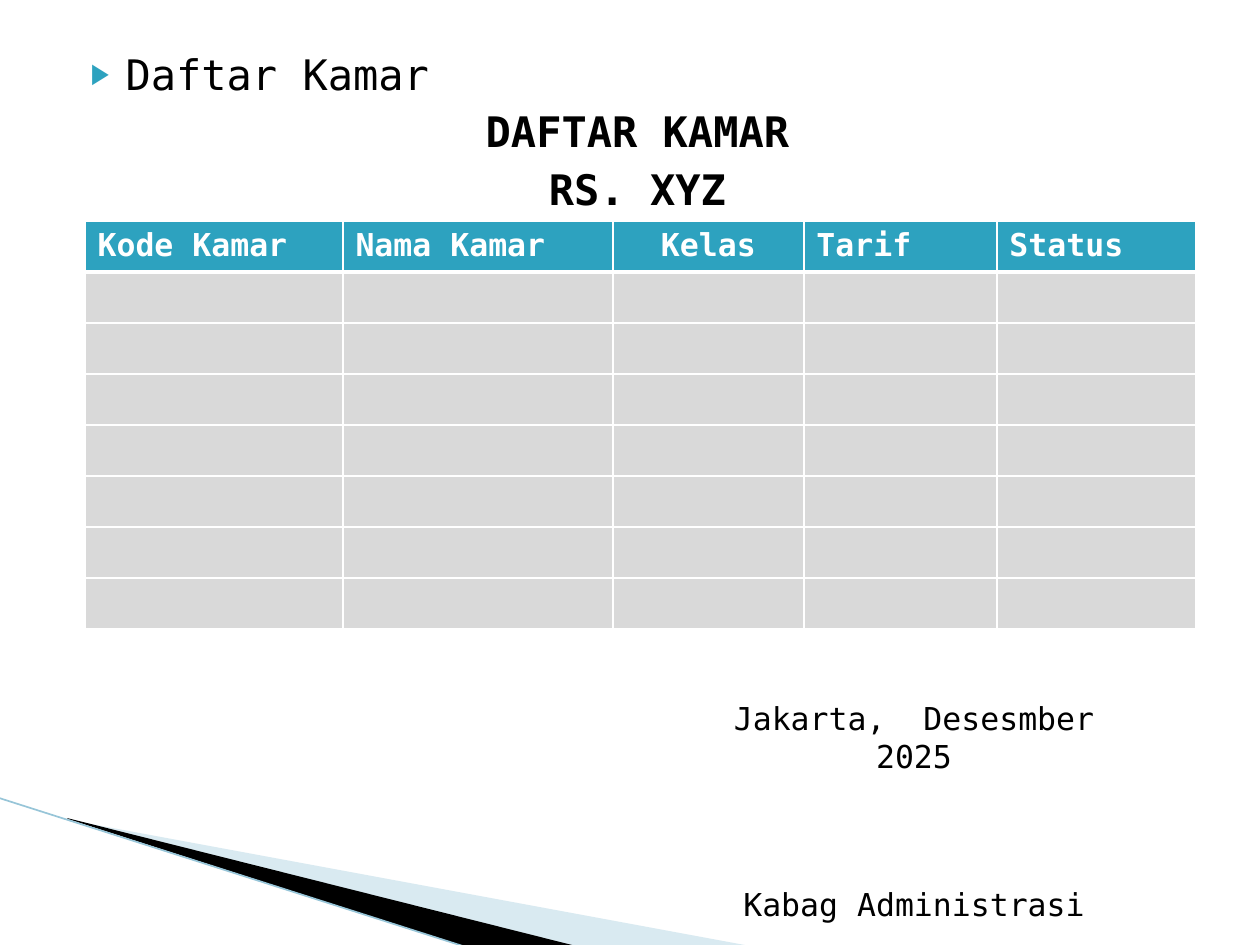
from lxml.etree import SubElement
from pptx import Presentation
from pptx.dml.color import RGBColor
from pptx.enum.shapes import MSO_CONNECTOR
from pptx.enum.text import MSO_ANCHOR, MSO_AUTO_SIZE, PP_ALIGN
from pptx.oxml.ns import qn
from pptx.util import Pt

PX = 914400 // 126
FONT = "DejaVu Sans Mono"
BLACK = RGBColor(0x00, 0x00, 0x00)
WHITE = RGBColor(0xFF, 0xFF, 0xFF)
TEAL = RGBColor(0x2D, 0xA2, 0xBF)
PALE_BLUE = RGBColor(0xA0, 0xCB, 0xDC)
EDGE_BLUE = RGBColor(0x97, 0xC5, 0xD8)
GRAY = RGBColor(0xD9, 0xD9, 0xD9)


def style(paragraph, size, color=BLACK, bold=False, align=PP_ALIGN.LEFT):
    paragraph.alignment = align
    font = paragraph.font
    font.name, font.size, font.bold = FONT, Pt(size), bold
    font.color.rgb = color
    for run in paragraph.runs:
        run.font.name, run.font.size, run.font.bold = FONT, Pt(size), bold
        run.font.color.rgb = color


def add_border(cell, side, width):
    line = SubElement(cell._tc.get_or_add_tcPr(), qn(f"a:ln{side}"), w=str(Pt(width)))
    fill = SubElement(line, qn("a:solidFill"))
    SubElement(fill, qn("a:srgbClr"), val=str(WHITE))


prs = Presentation()
prs.slide_width, prs.slide_height = 1260 * PX, 945 * PX
slide = prs.slides.add_slide(prs.slide_layouts[1])
shapes = slide.shapes
title = shapes.title
title.element.getparent().remove(title.element)
slide.background.fill.solid()
slide.background.fill.fore_color.rgb = WHITE

# Corner wedges
wedges = [
    ([(69, 820), (750, 946), (575, 946), (69, 819)], PALE_BLUE, 40),
    ([(67, 818), (576, 946), (469, 948), (68, 819)], BLACK, 100),
]
for points, color, opacity in wedges:
    builder = shapes.build_freeform(*points[0], scale=PX)
    builder.add_line_segments(points[1:])
    wedge = builder.convert_to_shape()
    wedge.shadow.inherit = False
    wedge.line.fill.background()
    wedge.fill.solid()
    wedge.fill.fore_color.rgb = color
    if opacity < 100:
        srgb = wedge.fill._xPr.find(f".//{qn('a:srgbClr')}")
        SubElement(srgb, qn("a:alpha"), val=str(opacity * 1000))

edge = shapes.add_connector(MSO_CONNECTOR.STRAIGHT, -1 * PX, 798 * PX, 469 * PX, 948 * PX)
edge.line.color.rgb = EDGE_BLUE
edge.line.width = Pt(0.95)
SubElement(edge._element.spPr, qn("a:effectLst"))

# Headings
heading = slide.placeholders[1]
heading.left, heading.top, heading.width, heading.height = 63 * PX, 42 * PX, 1134 * PX, 786 * PX
frame = heading.text_frame
frame.text = "Daftar Kamar\nDAFTAR KAMAR\nRS. XYZ"
frame.auto_size = MSO_AUTO_SIZE.NONE
frame.vertical_anchor = MSO_ANCHOR.TOP
for index, paragraph in enumerate(frame.paragraphs):
    props = paragraph._p.get_or_add_pPr()
    paragraph.space_before = Pt(4 if index else 0)
    if index:
        props.set("marL", str(15 * PX))
        props.set("indent", "0")
        SubElement(props, qn("a:buNone"))
        style(paragraph, 24, bold=True, align=PP_ALIGN.CENTER)
    else:
        props.set("marL", str(50 * PX))
        props.set("indent", str(-35 * PX))
        bullet_color = SubElement(props, qn("a:buClr"))
        SubElement(bullet_color, qn("a:srgbClr"), val=str(TEAL))
        SubElement(props, qn("a:buSzPct"), val="68000")
        SubElement(props, qn("a:buChar"), char="▶")
        style(paragraph, 24)

# Room table
columns = [("Kode Kamar", 258), ("Nama Kamar", 270), ("Kelas", 191), ("Tarif", 193), ("Status", 199)]
ROWS, ROW_HEIGHT = 8, 51
table_width = sum(width for _, width in columns)
rooms = shapes.add_table(ROWS, len(columns), 85 * PX, 221 * PX,
                         table_width * PX, ROWS * ROW_HEIGHT * PX).table
for column, (label, width) in enumerate(columns):
    rooms.columns[column].width = width * PX
    rooms.cell(0, column).text = label
    for row in range(ROWS):
        cell = rooms.cell(row, column)
        add_border(cell, "L", 1)
        add_border(cell, "R", 1)
        add_border(cell, "T", 3 if row == 1 else 1)
        add_border(cell, "B", 3 if row == 0 else 1)
        cell.fill.solid()
        cell.fill.fore_color.rgb = GRAY if row else TEAL
        align = PP_ALIGN.CENTER if label == "Kelas" and row == 0 else PP_ALIGN.LEFT
        style(cell.text_frame.paragraphs[0], 18, BLACK if row else WHITE, row == 0, align)

# Signature
signature = shapes.add_textbox(683 * PX, 693 * PX, 462 * PX, 204 * PX).text_frame
signature.word_wrap = True
signature.text = "Jakarta,  Desesmber 2025\nKabag Administrasi"
for paragraph in signature.paragraphs:
    style(paragraph, 18, align=PP_ALIGN.CENTER)
signature.paragraphs[1].space_before = Pt(63)

prs.save("out.pptx")
